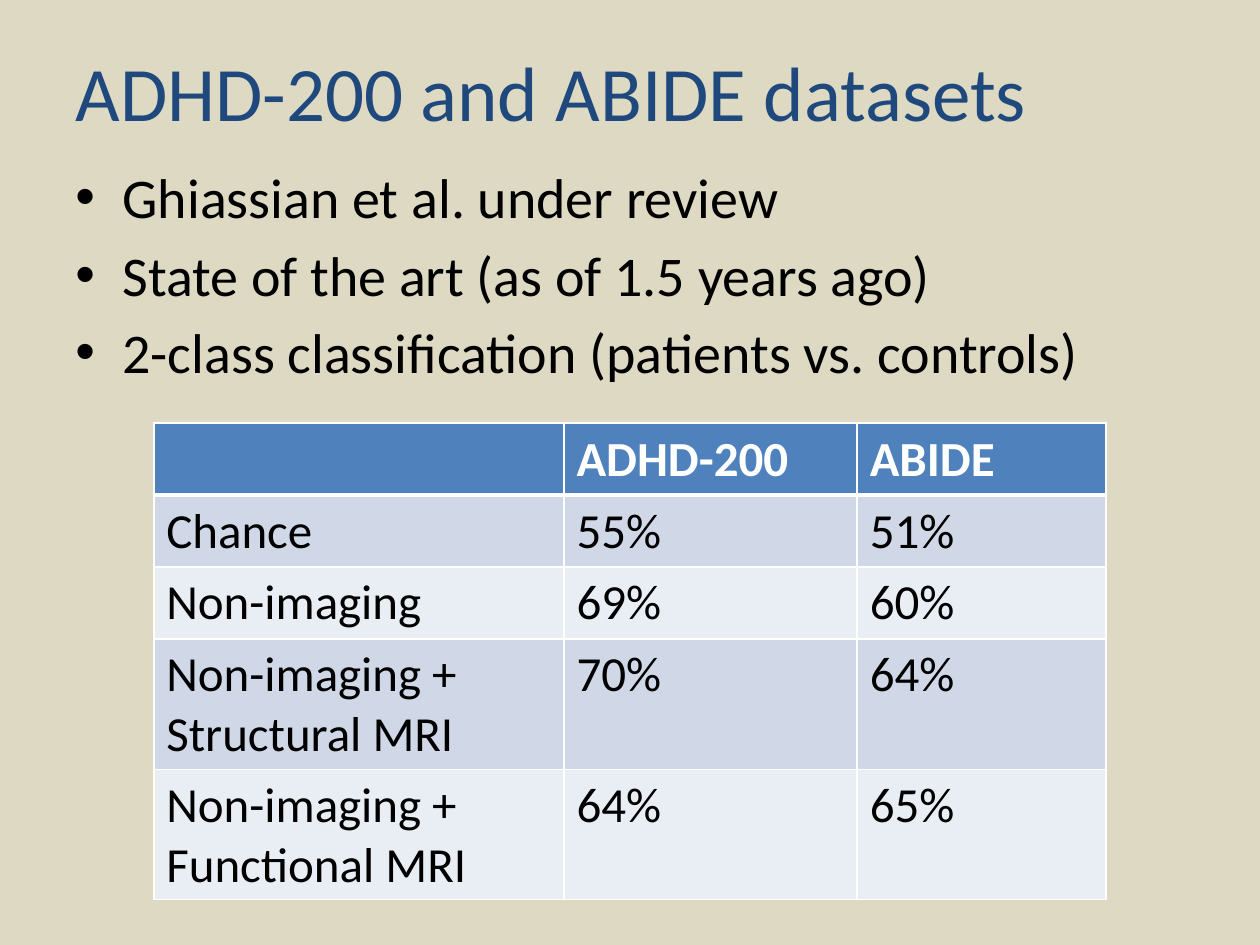
from lxml.etree import SubElement
from pptx import Presentation
from pptx.dml.color import RGBColor
from pptx.enum.text import MSO_ANCHOR as Anchor, PP_ALIGN as Align
from pptx.oxml.ns import qn
from pptx.util import Cm, Pt

FONT = "Calibri"
COLORS = {
    "background": "DDD9C3",
    "title": "1F497D",
    "text": "000000",
    "header": "4F81BD",
    "band_dark": "D0D8E8",
    "band_light": "E9EDF4",
    "white": "FFFFFF",
}
BULLETS = [
    "Ghiassian et al. under review",
    "State of the art (as of 1.5 years ago)",
    "2-class classification (patients vs. controls)",
]
RESULTS = [
    ["", "ADHD-200", "ABIDE"],
    ["Chance", "55%", "51%"],
    ["Non-imaging", "69%", "60%"],
    ["Non-imaging + Structural MRI", "70%", "64%"],
    ["Non-imaging + Functional MRI", "64%", "65%"],
]
COLUMN_WIDTHS = [8.27, 5.91, 5.02]
ROW_HEIGHTS = [1.45, 1.45, 1.45, 2.42, 2.48]


def color(name):
    return RGBColor.from_string(COLORS[name])


def format_text(para, size, color_name, bold=False):
    para.alignment = Align.LEFT
    for span in para.runs:
        span.font.name = FONT
        span.font.size = Pt(size)
        span.font.bold = bold
        span.font.color.rgb = color(color_name)


def add_title(page, left, top, width, height):
    title = page.shapes.title
    title.left, title.top, title.width, title.height = left, top, width, height
    title.text_frame.text = "ADHD-200 and ABIDE datasets"
    title.text_frame.vertical_anchor = Anchor.TOP
    format_text(title.text_frame.paragraphs[0], 44, "title")


def add_bullets(page, left, top, width, height):
    frame = page.shapes.add_textbox(left, top, width, height).text_frame
    frame.word_wrap = True
    frame.text = "\n".join(BULLETS)
    indent = Cm(0.95)
    for para in frame.paragraphs:
        format_text(para, 32, "text")
        para.space_before = Pt(6)
        properties = para._p.get_or_add_pPr()
        properties.set("marL", str(indent))
        properties.set("indent", str(-indent))
        SubElement(properties, qn("a:buFont"), typeface="Arial")
        SubElement(properties, qn("a:buChar"), char="•")


def set_borders(cell, top, bottom):
    properties = cell._tc.get_or_add_tcPr()
    for side, points in (("L", 1), ("R", 1), ("T", top), ("B", bottom)):
        line = SubElement(properties, qn(f"a:ln{side}"), w=str(Pt(points)))
        fill = SubElement(line, qn("a:solidFill"))
        SubElement(fill, qn("a:srgbClr"), val=COLORS["white"])


def add_results(page, left, top):
    table = page.shapes.add_table(
        len(RESULTS), len(COLUMN_WIDTHS), left, top,
        Cm(sum(COLUMN_WIDTHS)), Cm(sum(ROW_HEIGHTS))).table
    for column, width in zip(table.columns, COLUMN_WIDTHS):
        column.width = Cm(width)
    for row, height in zip(table.rows, ROW_HEIGHTS):
        row.height = Cm(height)

    for row_index, values in enumerate(RESULTS):
        is_header = row_index == 0
        band = "band_dark" if row_index % 2 else "band_light"
        for column_index, value in enumerate(values):
            cell = table.cell(row_index, column_index)
            cell.text_frame.text = value
            format_text(cell.text_frame.paragraphs[0], 28,
                        "white" if is_header else "text", is_header)
            # The rule under the header is heavier than the grid
            set_borders(cell, 3 if row_index == 1 else 1, 3 if is_header else 1)
            cell.fill.solid()
            cell.fill.fore_color.rgb = color("header" if is_header else band)


def build_slide(deck):
    page = deck.slides.add_slide(deck.slide_layouts[5])
    page.background.fill.solid()
    page.background.fill.fore_color.rgb = color("background")

    # Title and bullets share the same margins; the table sits below
    margin = Cm(1.27)
    width = deck.slide_width - 2 * margin
    add_title(page, margin, Cm(0.78), width, Cm(3.18))
    add_bullets(page, margin, Cm(3.15), width, Cm(12.57))
    add_results(page, Cm(3.1), Cm(8.53))


def main():
    deck = Presentation()
    deck.slide_width, deck.slide_height = Cm(25.4), Cm(19.05)
    build_slide(deck)
    deck.save("out.pptx")


if __name__ == "__main__":
    main()
